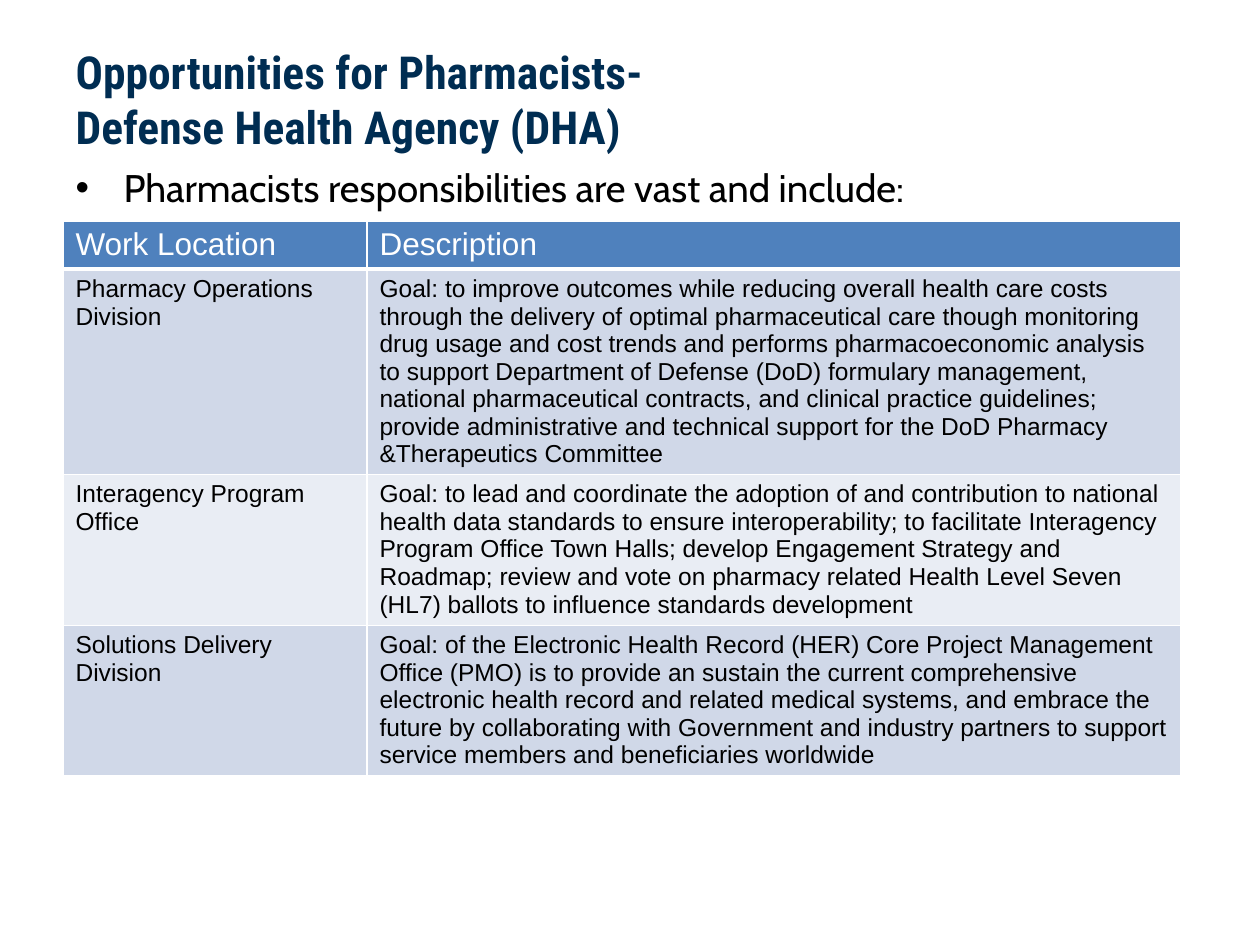
from pptx import Presentation
from pptx.dml.color import RGBColor
from pptx.enum.text import MSO_ANCHOR, MSO_AUTO_SIZE, PP_ALIGN
from pptx.oxml.ns import qn
from pptx.util import Emu, Pt
from lxml.etree import SubElement

EMU_PER_INCH, PX_PER_INCH = 914400, 126
NAVY, BLACK, WHITE = "002D52", "000000", "FFFFFF"
HEADER_FILL, BAND_FILLS = "4F81BD", ("D0D8E8", "E9EDF4")
MARGIN_LEFT = 63

TITLE_LINES = ("Opportunities for Pharmacists-", "Defense Health Agency (DHA)")
INTRO = "Pharmacists responsibilities are vast and include:"
COLUMN_WIDTHS = (304, 814)
ROW_HEIGHTS = (48, 205, 151, 149)
ROWS = (
    ("Work Location", "Description"),
    (
        "Pharmacy Operations Division",
        "Goal: to improve outcomes while reducing overall health care costs through "
        "the delivery of optimal pharmaceutical care though monitoring drug usage and "
        "cost trends and performs pharmacoeconomic analysis to support Department of "
        "Defense (DoD) formulary management, national pharmaceutical contracts, and "
        "clinical practice guidelines; provide administrative and technical support "
        "for the DoD Pharmacy &Therapeutics Committee",
    ),
    (
        "Interagency Program Office",
        "Goal: to lead and coordinate the adoption of and contribution to national "
        "health data standards to ensure interoperability; to facilitate Interagency "
        "Program Office Town Halls; develop Engagement Strategy and Roadmap; review "
        "and vote on pharmacy related Health Level Seven (HL7) ballots to influence "
        "standards development",
    ),
    (
        "Solutions Delivery Division",
        "Goal: of the Electronic Health Record (HER) Core Project Management Office "
        "(PMO) is to provide an sustain the current comprehensive electronic health "
        "record and related medical systems, and embrace the future by collaborating "
        "with Government and industry partners to support service members and "
        "beneficiaries worldwide",
    ),
)


def px(length):
    """Turn whole pixels into EMU."""
    return Emu(round(length * EMU_PER_INCH / PX_PER_INCH))


def color(value):
    """Turn a hex string into a colour."""
    return RGBColor.from_string(value)


def add_span(para, text, font, size, ink, bold=False):
    """Add one formatted run to a paragraph."""
    span = para.add_run()
    span.text = text
    span.font.name = font
    span.font.size = Pt(size)
    span.font.bold = bold
    span.font.color.rgb = color(ink)


def place(box, left, top, width, height):
    """Move a placeholder and return its first paragraph, aligned top left."""
    box.left, box.top, box.width, box.height = map(px, (left, top, width, height))
    frame = box.text_frame
    frame.word_wrap = True
    frame.auto_size = MSO_AUTO_SIZE.NONE
    frame.vertical_anchor = MSO_ANCHOR.TOP
    para = frame.paragraphs[0]
    para.alignment = PP_ALIGN.LEFT
    para.space_before = Pt(0)
    return para


def add_bullet(para, indent):
    """Give a paragraph a round bullet with a hanging indent."""
    properties = para._p.get_or_add_pPr()
    properties.set("marL", str(px(indent)))
    properties.set("indent", str(-px(indent)))
    SubElement(properties, qn("a:buFont"), typeface="Arial")
    SubElement(properties, qn("a:buChar"), char="•")


def add_border(cell, side, points):
    """Draw a white border on one side of a cell."""
    properties = cell._tc.get_or_add_tcPr()
    line = SubElement(properties, qn(f"a:ln{side}"), w=str(Pt(points)))
    fill = SubElement(line, qn("a:solidFill"))
    SubElement(fill, qn("a:srgbClr"), val=WHITE)


def fill_cell(cell, text, row):
    """Style a cell as header or banded body and write its text."""
    header = row == 0
    for side in "LRTB":
        add_border(cell, side, 3 if header and side == "B" else 1)
    cell.fill.solid()
    cell.fill.fore_color.rgb = color(HEADER_FILL if header else BAND_FILLS[(row - 1) % 2])
    size, ink = (18, WHITE) if header else (14, BLACK)
    add_span(cell.text_frame.paragraphs[0], text, "Arial", size, ink)


def add_locations_table(page, left, top):
    """Add the table of work locations and their goals."""
    frame = page.shapes.add_table(
        len(ROWS), len(COLUMN_WIDTHS), px(left), px(top),
        px(sum(COLUMN_WIDTHS)), px(sum(ROW_HEIGHTS)),
    )
    table = frame.table
    for column, width in zip(table.columns, COLUMN_WIDTHS):
        column.width = px(width)
    for row, (texts, height) in enumerate(zip(ROWS, ROW_HEIGHTS)):
        table.rows[row].height = px(height)
        for column, text in enumerate(texts):
            fill_cell(table.cell(row, column), text, row)


def main():
    """Build and save the slide."""
    deck = Presentation()
    deck.slide_width, deck.slide_height = px(1260), px(945)
    page = deck.slides.add_slide(deck.slide_layouts[1])

    title = place(page.shapes.title, MARGIN_LEFT, 38, 1134, 157)
    for number, line in enumerate(TITLE_LINES):
        if number:
            title.add_line_break()
        add_span(title, line, "Roboto Condensed", 26, NAVY, bold=True)

    intro = place(page.placeholders[1], MARGIN_LEFT, 158, 1134, 687)
    add_bullet(intro, 48)
    add_span(intro, INTRO, "Cabin", 22, BLACK)

    add_locations_table(page, MARGIN_LEFT, 221)
    deck.save("out.pptx")


if __name__ == "__main__":
    main()
